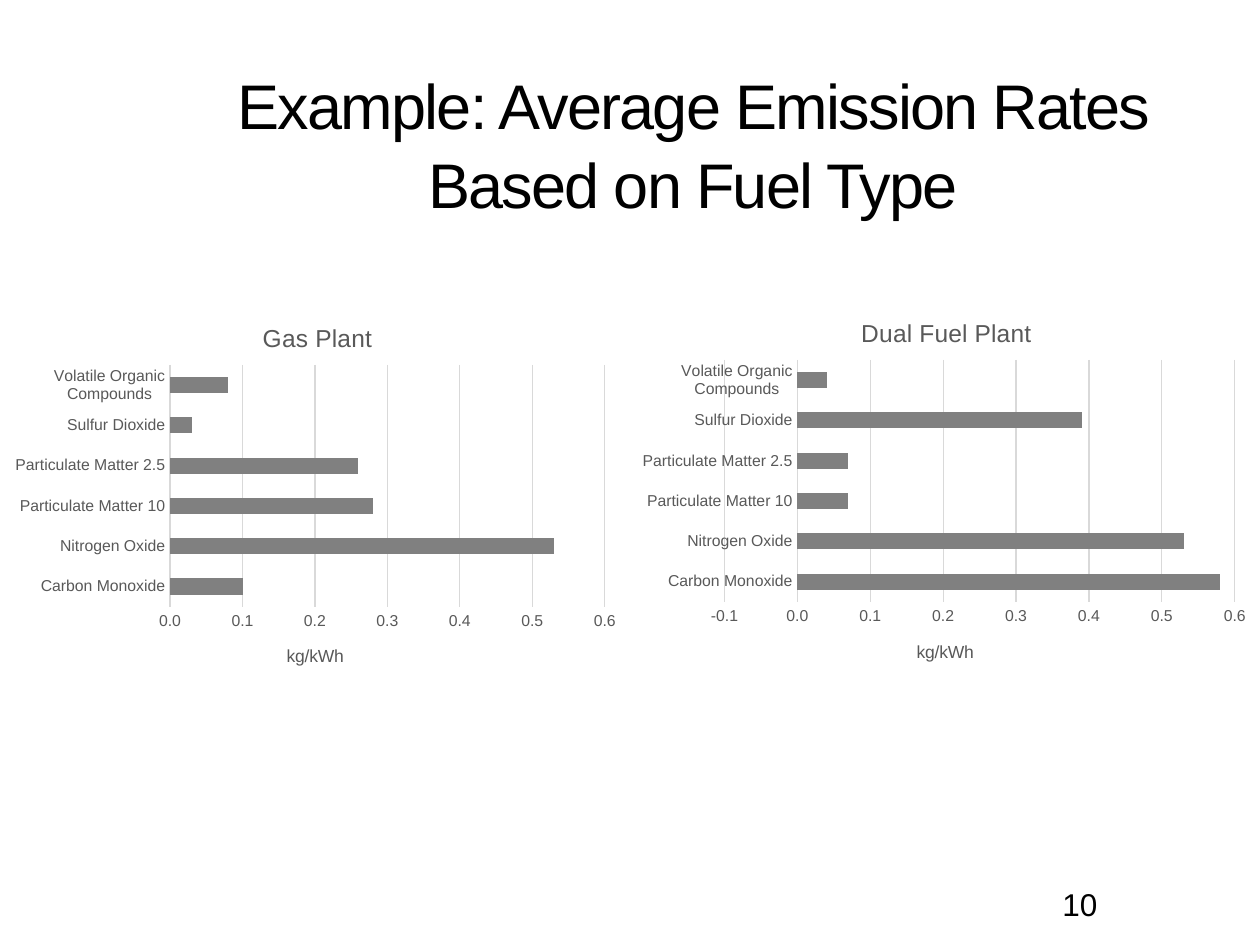
from lxml import etree
from pptx import Presentation
from pptx.chart.data import CategoryChartData as Data
from pptx.dml.color import RGBColor as Rgb
from pptx.enum.chart import XL_CHART_TYPE as Kind, XL_TICK_MARK as Tick
from pptx.enum.text import MSO_ANCHOR as Anchor, PP_ALIGN as Align
from pptx.oxml.ns import qn
from pptx.util import Pt

HUES = {"ink": "000000", "label": "595959", "grid": "D9D9D9", "bar": "808080"}


def write(frame, text, size=18, hue="ink", align=None, track=0, lead=None):
    frame.text = text
    para = frame.paragraphs[0]
    para.alignment = align
    para.line_spacing = lead
    run = para.runs[0]
    run.font.name = "Arial"
    run.font.size = Pt(size)
    run.font.bold = False
    run.font.color.rgb = Rgb.from_string(HUES[hue])
    if track:
        run.font._element.set("spc", str(track))


def place(node, index, **spots):
    for old in node.findall(qn("c:layout")):
        node.remove(old)
    layout = etree.Element(qn("c:layout"))
    node.insert(index, layout)
    manual = etree.SubElement(layout, qn("c:manualLayout"))
    if "w" in spots:
        etree.SubElement(manual, qn("c:layoutTarget")).set("val", "inner")
    for mode in ("xMode", "yMode"):
        etree.SubElement(manual, qn("c:" + mode)).set("val", "edge")
    for key, val in spots.items():
        etree.SubElement(manual, qn("c:" + key)).set("val", str(val))


deck = Presentation()
deck.slide_width, deck.slide_height = Pt(720), Pt(540)
slide = deck.slides.add_slide(deck.slide_layouts[5])

title = slide.shapes.title
title.left, title.top, title.width, title.height = Pt(108), Pt(42), Pt(576), Pt(78)
title.text_frame.word_wrap = True
title.text_frame.vertical_anchor = Anchor.MIDDLE
write(title.text_frame, "Example: Average Emission Rates Based on Fuel Type",
      size=36, align=Align.CENTER, track=-100, lead=1.05)

number = slide.shapes.add_textbox(Pt(600), Pt(502), Pt(84), Pt(26))
number.text_frame.word_wrap = True
write(number.text_frame, "10")

gases = ["Carbon Monoxide", "Nitrogen Oxide", "Particulate Matter 10",
         "Particulate Matter 2.5", "Sulfur Dioxide", "Volatile Organic Compounds"]
plants = [
    ("Gas Plant", 0, 170.6, 0, 0.41, 0.27, [0.1, 0.53, 0.28, 0.26, 0.03, 0.08]),
    ("Dual Fuel Plant", 360, 167.8, -0.1, 0.36, 0.15, [0.58, 0.53, 0.07, 0.07, 0.39, 0.04]),
]
for name, left, top, low, head, start, rates in plants:
    data = Data(number_format="0.0")
    data.categories = gases
    data.add_series("Series 1", rates)
    chart = slide.shapes.add_chart(
        Kind.BAR_CLUSTERED, Pt(left), Pt(top), Pt(360), Pt(223), data).chart
    chart.font.name = "Arial"
    chart.font.size = Pt(10)
    chart.has_legend = False
    chart.has_title = True
    write(chart.chart_title.text_frame, name, size=14, hue="label")
    place(chart.chart_title._element, 1, x=head, y=0.05)

    plot = chart.plots[0]
    plot.gap_width = 150
    plot.vary_by_categories = False
    fill = plot.series[0].format.fill
    fill.solid()
    fill.fore_color.rgb = Rgb.from_string(HUES["bar"])

    for axis in (chart.category_axis, chart.value_axis):
        axis.major_tick_mark = axis.minor_tick_mark = Tick.NONE
        font = axis.tick_labels.font
        font.name = "Arial"
        font.size = Pt(9)
        font.color.rgb = Rgb.from_string(HUES["label"])
    scale = chart.value_axis
    scale.minimum_scale, scale.maximum_scale, scale.major_unit = low, 0.6, 0.1
    scale.tick_labels.number_format = "0.0"
    scale.tick_labels.number_format_is_linked = False
    scale.format.line.fill.background()
    scale.has_major_gridlines = True
    for part in (scale.major_gridlines, chart.category_axis):
        part.format.line.width = Pt(0.75)
        part.format.line.color.rgb = Rgb.from_string(HUES["grid"])
    scale.has_title = True
    write(scale.axis_title.text_frame, "kg/kWh", size=10, hue="label")
    place(scale.axis_title._element, 1, x=0.45, y=0.88)
    place(chart._chartSpace.chart.plotArea, 0,
          x=start, y=0.17, w=round(0.96 - start, 2), h=0.62)

deck.save("out.pptx")
